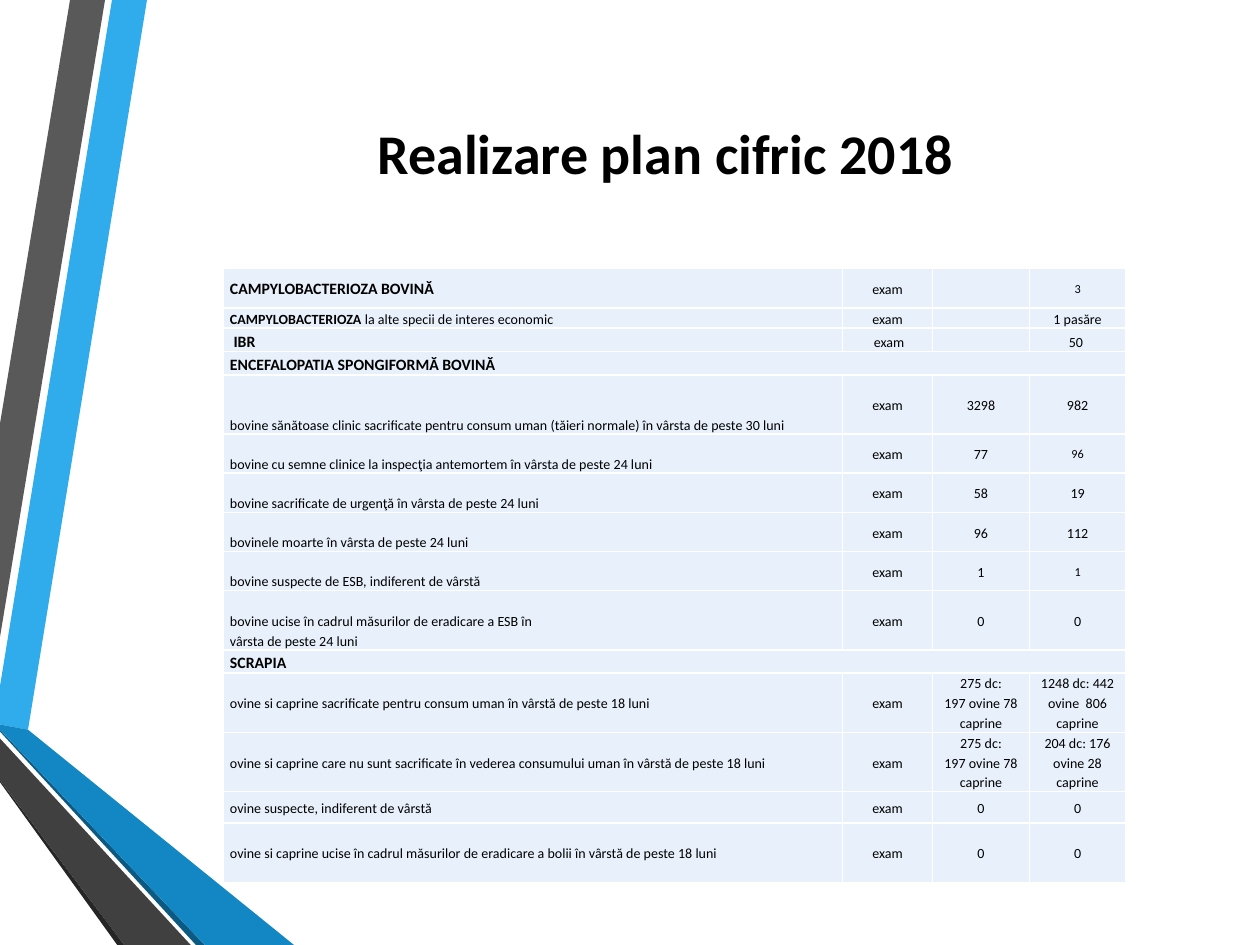
from lxml.etree import SubElement
from pptx import Presentation
from pptx.dml.color import RGBColor
from pptx.enum.text import MSO_ANCHOR as Anchor, PP_ALIGN as Align
from pptx.oxml.ns import qn
from pptx.util import Pt

FONT = "Calibri"
TITLE = "Realizare plan cifric 2018"
BLACK, WHITE, CELL_FILL = "000000", "FFFFFF", "E8F1FB"
MID, LOW = Anchor.MIDDLE, Anchor.BOTTOM

# Side ribbons: colour and corner points
RIBBONS = [
    ("30ACEC", [(0, 391.7), (0, 414), (15.8, 416.9), (84.2, 0), (64.1, 0)]),
    ("595959", [(59.8, 0), (39.6, 0), (0, 241.9), (0, 364.3)]),
    ("262626", [(0, 445.7), (0, 447.1), (67, 540), (71.3, 540)]),
    ("0C5A82", [(0, 416.9), (0, 417.6), (112.3, 540), (117.4, 540)]),
    ("1287C3", [(0, 416.9), (117.4, 540), (167.8, 540), (15.8, 416.9), (0, 414)]),
    ("404040", [(0, 445.7), (71.3, 540), (108.7, 540), (0, 421.9)]),
]

TABLE_LEFT, TABLE_TOP = 127.8, 153
COLUMN_WIDTHS = [353.6, 51.6, 55.2, 55.2]
ONE_LINE, TWO_LINES, THREE_LINES = 13.2, 22.4, 33.8
GOATS_PLAN = "275 dc:\n 197 ovine 78  caprine"

# Height, anchor of the label, bold label, plain label, (unit, planned, achieved)
ROWS = [
    (23, MID, "CAMPYLOBACTERIOZA BOVINĂ", "", ("exam", "", "3")),
    (11.5, MID, "CAMPYLOBACTERIOZA ", "la alte specii de interes economic",
     ("exam", "", "1 pasăre")),
    (13.5, LOW, " IBR", "", (" exam", "", "50 ")),
    (ONE_LINE, LOW, "ENCEFALOPATIA SPONGIFORMĂ BOVINĂ", "", ()),
    (THREE_LINES, LOW, "", "bovine sănătoase clinic sacrificate pentru consum uman "
     "(tăieri normale) în vârsta de peste 30 luni", ("exam", "3298", "982")),
    (TWO_LINES, LOW, "", "bovine cu semne clinice la inspecţia antemortem în vârsta "
     "de peste 24 luni", ("exam", "77", "96")),
    (TWO_LINES, LOW, "", "bovine sacrificate de urgenţă în vârsta de peste 24 luni",
     ("exam", "58", "19")),
    (TWO_LINES, LOW, "", "bovinele moarte în vârsta de peste 24 luni",
     ("exam", "96", "112")),
    (TWO_LINES, LOW, "", "bovine suspecte de ESB, indiferent de vârstă",
     ("exam", "1", "1")),
    (THREE_LINES, LOW, "", "bovine ucise în cadrul măsurilor de eradicare a ESB în\v"
     "vârsta de peste 24 luni", ("exam", "0", "0")),
    (ONE_LINE, LOW, "SCRAPIA", "", ()),
    (THREE_LINES, MID, "", "ovine si caprine sacrificate pentru consum uman în vârstă "
     "de peste 18 luni", ("exam", GOATS_PLAN, "1248 dc: 442 ovine  806 caprine")),
    (THREE_LINES, MID, "", "ovine si caprine care nu sunt sacrificate în vederea "
     "consumului uman în vârstă de peste 18 luni",
     ("exam", GOATS_PLAN, "204 dc: 176 ovine 28 caprine")),
    (18, MID, "", "ovine suspecte, indiferent de vârstă", ("exam", "0", "0")),
    (THREE_LINES, MID, "", "ovine si caprine ucise în cadrul măsurilor de eradicare "
     "a bolii în vârstă de peste 18 luni", ("exam", "0", "0")),
]
SMALL_RESULT_ROWS = {0, 5, 8}


def rgb(code):
    return RGBColor.from_string(code)


def set_font(font, size, bold=False):
    font.name, font.size, font.bold = FONT, Pt(size), bold
    font.color.rgb = rgb(BLACK)


def draw_ribbon(shapes, colour, corners):
    builder = shapes.build_freeform(*corners[0], scale=Pt(1))
    builder.add_line_segments(corners[1:])
    ribbon = builder.convert_to_shape()
    ribbon.shadow.inherit = False
    ribbon.fill.solid()
    ribbon.fill.fore_color.rgb = rgb(colour)
    ribbon.line.fill.background()


def style_cell(cell):
    """Give the cell white borders, a pale fill and tight margins."""
    properties = cell._tc.get_or_add_tcPr()
    for side in ("a:lnL", "a:lnR", "a:lnT", "a:lnB"):
        border = SubElement(properties, qn(side), w=str(Pt(1)))
        SubElement(SubElement(border, qn("a:solidFill")), qn("a:srgbClr"), val=WHITE)
    cell.fill.solid()
    cell.fill.fore_color.rgb = rgb(CELL_FILL)
    cell.margin_left = cell.margin_right = Pt(3.6)
    cell.margin_top = cell.margin_bottom = 0


def format_paragraphs(cell, size, align, anchor, bold=False):
    cell.vertical_anchor = anchor
    for paragraph in cell.text_frame.paragraphs:
        paragraph.alignment = align
        paragraph.line_spacing = 1.15
        set_font(paragraph.font, size, bold)


def write_label(cell, bold_part, plain_part, anchor):
    cell.text = bold_part + plain_part
    heading = not plain_part
    format_paragraphs(cell, 9 if heading else 8, Align.LEFT, anchor, heading)
    if bold_part and plain_part:
        paragraph = cell.text_frame.paragraphs[0]
        paragraph.runs[0].text = bold_part
        paragraph.runs[0].font.bold = True
        paragraph.add_run().text = plain_part


def fill_table(table):
    table.first_row = table.horz_banding = False
    for column, width in zip(table.columns, COLUMN_WIDTHS):
        column.width = Pt(width)
    for index, (height, anchor, bold_part, plain_part, values) in enumerate(ROWS):
        row = table.rows[index]
        row.height = Pt(height)
        label, *value_cells = row.cells
        for cell in row.cells:
            style_cell(cell)
        write_label(label, bold_part, plain_part, anchor)
        if not values:
            label.merge(value_cells[-1])
        value_anchor = LOW if bold_part and anchor == LOW else MID
        for cell, value in zip(value_cells, values):
            cell.text = value
            small = index in SMALL_RESULT_ROWS and cell is value_cells[-1]
            format_paragraphs(cell, 7 if small else 8, Align.CENTER, value_anchor)


def main():
    deck = Presentation()
    deck.slide_width, deck.slide_height = Pt(720), Pt(540)
    slide = deck.slides.add_slide(deck.slide_layouts[5])
    shapes = slide.shapes
    for colour, corners in RIBBONS:
        draw_ribbon(shapes, colour, corners)

    title = shapes.title
    title.left, title.top, title.width, title.height = Pt(77), Pt(36), Pt(607), Pt(101.5)
    title.text_frame.text = TITLE
    title.text_frame.vertical_anchor = MID
    heading = title.text_frame.paragraphs[0]
    heading.alignment = Align.CENTER
    set_font(heading.font, 32, True)

    frame = shapes.add_table(len(ROWS), len(COLUMN_WIDTHS), Pt(TABLE_LEFT), Pt(TABLE_TOP),
                             Pt(sum(COLUMN_WIDTHS)), Pt(sum(row[0] for row in ROWS)))
    fill_table(frame.table)
    deck.save("out.pptx")


if __name__ == "__main__":
    main()
